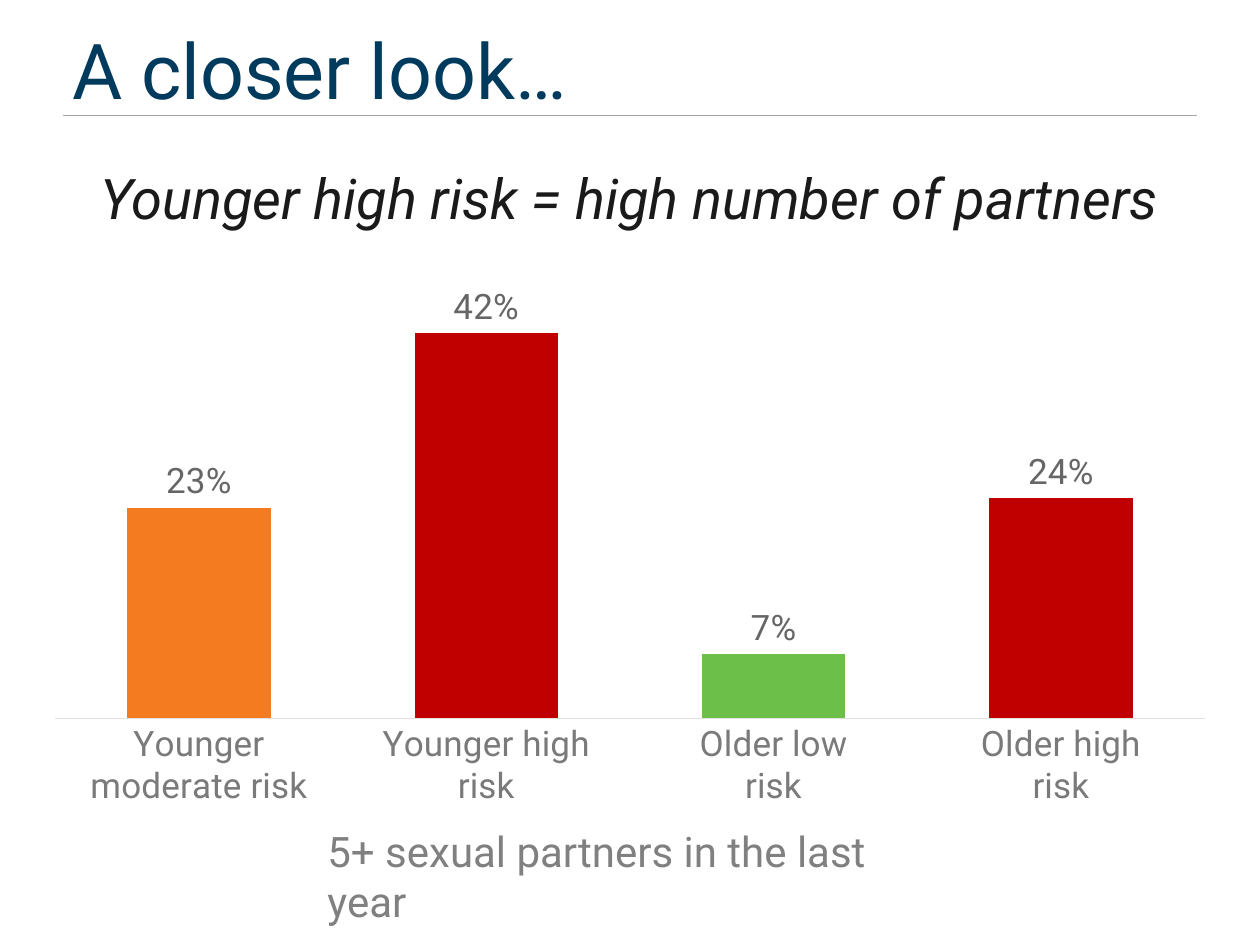
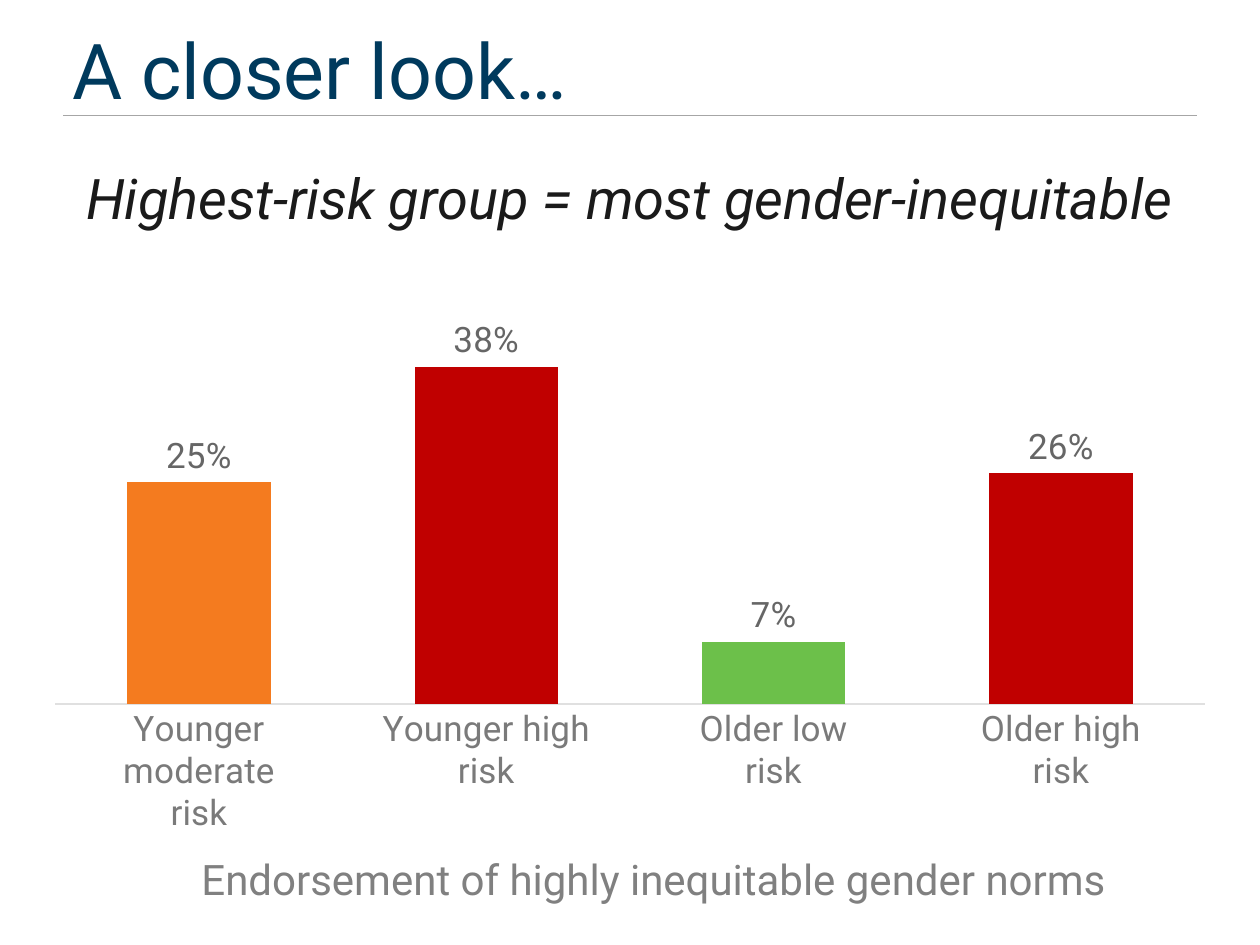
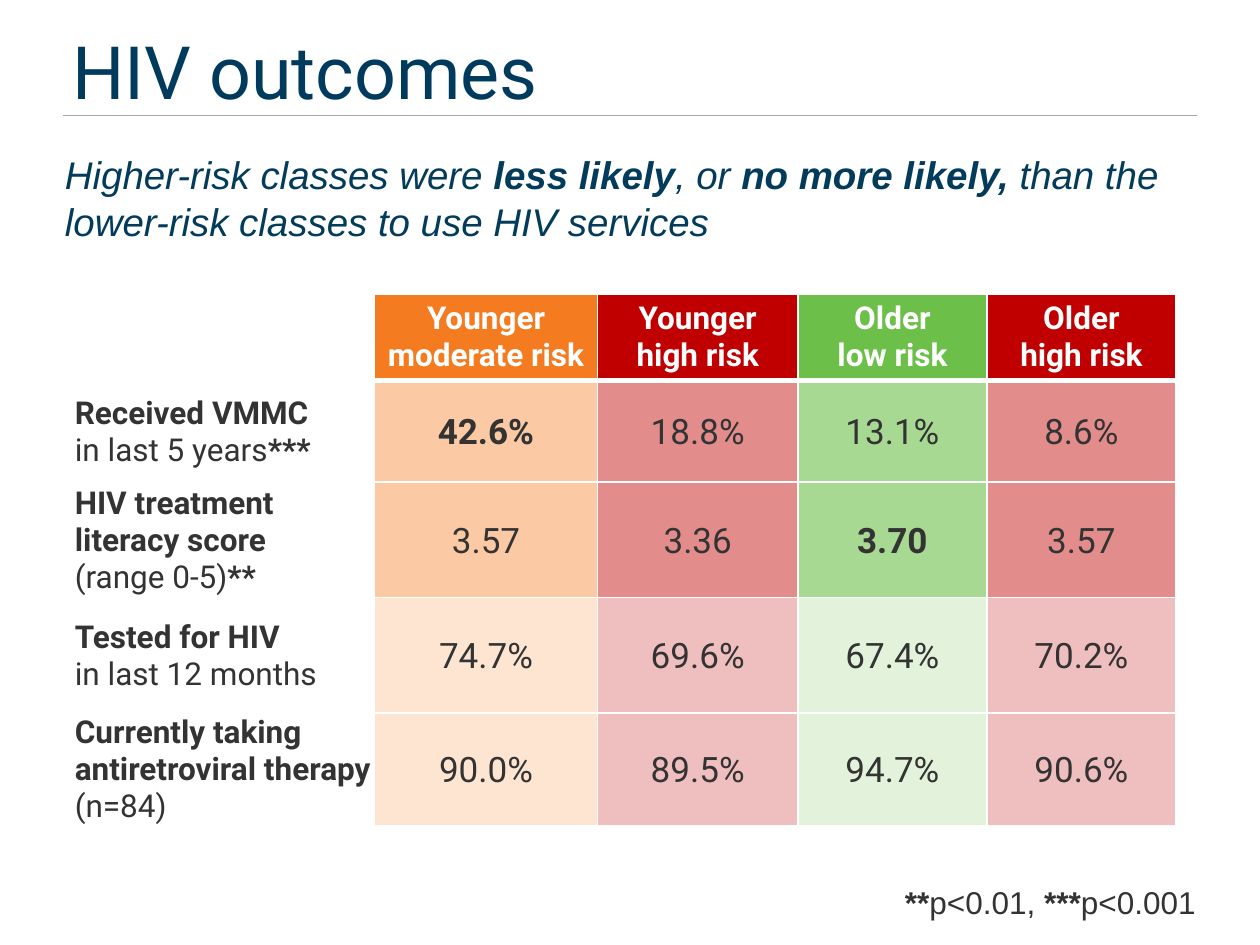
from typing import NamedTuple

from lxml import etree
from pptx import Presentation
from pptx.chart import data as chart_data
from pptx.dml.color import RGBColor
from pptx.enum import chart as charts, shapes, text
from pptx.oxml import ns
from pptx.util import Pt

COLOURS = {
    "title": "003A5D", "lead": "033C5A", "ink": "333333", "statement": "1A1A1A",
    "rule": "A6A6A6", "axis": "E0E0E0", "category": "7A7A7A", "value": "666666",
    "caption": "808080", "white": "FFFFFF",
    "orange": "F47B1F", "orange mid": "FBCAA5", "orange pale": "FDE5D2",
    "red": "C00000", "red mid": "E38C8C", "red pale": "EFBFBF",
    "green": "6CC04A", "green mid": "A7D992", "green pale": "E2F2DB",
}
GROUP_HUES = ["orange", "red", "green", "red"]
FONT = "Roboto"
LEFT, CENTER = text.PP_ALIGN.LEFT, text.PP_ALIGN.CENTER
TOP, MIDDLE, BOTTOM = text.MSO_ANCHOR.TOP, text.MSO_ANCHOR.MIDDLE, text.MSO_ANCHOR.BOTTOM


class Area(NamedTuple):
    """A rectangle in points."""
    left: float
    top: float
    width: float
    height: float


class Span(NamedTuple):
    text: str
    bold: bool = False


class ChartPage(NamedTuple):
    statement: str
    categories: list[str]
    values: list[float]
    chart_area: Area
    caption: str
    caption_area: Area


class Outcome(NamedTuple):
    label: list[list[Span]]
    values: list[str]
    shade: str
    height: float
    best: int | None = None


CHART_PAGES = [
    ChartPage("Younger high risk = high number of partners",
              ["Younger moderate risk", "Younger high\nrisk", "Older low\nrisk", "Older high\nrisk"],
              [0.23, 0.42, 0.07, 0.24], Area(18, 142, 684, 326),
              "5+ sexual partners in the last year", Area(180, 468, 367, 36)),
    ChartPage("Highest-risk group = most gender-inequitable",
              ["Younger moderate\nrisk", "Younger high\nrisk", "Older low\nrisk", "Older high\nrisk"],
              [0.25, 0.38, 0.07, 0.26], Area(18, 142, 684, 342),
              "Endorsement of highly inequitable gender norms", Area(108, 484, 533, 36)),
]

COLUMN_WIDTHS = [172, 127.5, 114.5, 108, 108]
HEADER_HEIGHT = 48
HEADERS = [["Younger moderate risk"], ["Younger", "high risk"], ["Older", "low risk"], ["Older", "high risk"]]
OUTCOMES = [
    Outcome([[Span("Received VMMC", True)], [Span("in last 5 years"), Span("***", True)]],
            ["42.6%", "18.8%", "13.1%", "8.6%"], "mid", 58, best=0),
    Outcome([[Span("HIV treatment", True)], [Span("literacy score", True)],
             [Span("(range 0-5)"), Span("**", True)]],
            ["3.57", "3.36", "3.70", "3.57"], "mid", 66, best=2),
    Outcome([[Span("Tested for HIV", True)], [Span("in last 12 months")]],
            ["74.7%", "69.6%", "67.4%", "70.2%"], "pale", 66),
    Outcome([[Span("Currently taking antiretroviral therapy ", True), Span("(n=84)")]],
            ["90.0%", "89.5%", "94.7%", "90.6%"], "pale", 50),
]


def rgb(name: str) -> RGBColor:
    return RGBColor.from_string(COLOURS[name])


def place(shape, area: Area) -> None:
    shape.left, shape.top, shape.width, shape.height = map(Pt, area)


def style_font(font, size: float, colour: str, name: str = FONT) -> None:
    font.size, font.name = Pt(size), name
    font.color.rgb = rgb(colour)


def write(frame, paragraphs: list[list[Span]], *, size: float, colour: str, font: str = FONT,
          italic: bool = False, align=LEFT, spacing: float = 1.0) -> None:
    frame.word_wrap = True
    for index, spans in enumerate(paragraphs):
        para = frame.paragraphs[0] if index == 0 else frame.add_paragraph()
        para.alignment, para.line_spacing, para.space_before = align, spacing, Pt(0)
        for span in spans:
            run = para.add_run()
            run.text = span.text
            style_font(run.font, size, colour, font)
            run.font.bold, run.font.italic = span.bold, italic


def add_text(page, area: Area, spans: list[Span], **style) -> None:
    box = page.shapes.add_textbox(*map(Pt, area))
    write(box.text_frame, [spans], **style)


def add_page(deck, layout: int, title: str, title_size: float = 44):
    """Add a slide with its title and the rule under it."""
    page = deck.slides.add_slide(deck.slide_layouts[layout])
    rule = page.shapes.add_connector(shapes.MSO_CONNECTOR.STRAIGHT, Pt(36), Pt(66), Pt(684), Pt(66))
    rule.line.color.rgb, rule.line.width = rgb("rule"), Pt(1)
    etree.SubElement(rule._element.spPr, ns.qn("a:effectLst"))
    heading = page.shapes.title
    place(heading, Area(34, 21, 494, 44.5))
    frame = heading.text_frame
    frame.auto_size, frame.vertical_anchor = text.MSO_AUTO_SIZE.NONE, BOTTOM
    frame.margin_bottom = 0
    write(frame, [[Span(title)]], size=title_size, colour="title")
    return page


def add_statement(page, statement: str) -> None:
    body = page.placeholders[1]
    place(body, Area(36, 90, 648, 372))
    frame = body.text_frame
    frame.auto_size, frame.vertical_anchor = text.MSO_AUTO_SIZE.NONE, TOP
    properties = frame.paragraphs[0]._p.get_or_add_pPr()
    properties.set("marL", "0")
    properties.set("indent", "0")
    etree.SubElement(properties, ns.qn("a:buNone"))
    write(frame, [[Span(statement)]], size=32, colour="statement", italic=True, align=CENTER)


def add_column_chart(page, content: ChartPage) -> None:
    source = chart_data.CategoryChartData(number_format="0%")
    source.categories = content.categories
    source.add_series("Series 1", content.values)
    chart = page.shapes.add_chart(charts.XL_CHART_TYPE.COLUMN_CLUSTERED,
                                  *map(Pt, content.chart_area), source).chart
    style_font(chart.font, 20, "ink")
    chart.has_legend = chart.has_title = False

    values = chart.value_axis
    values.minimum_scale, values.maximum_scale = 0, 0.5
    values.has_major_gridlines = values.visible = False

    groups = chart.category_axis
    groups.major_tick_mark = charts.XL_TICK_MARK.NONE
    groups.format.line.color.rgb, groups.format.line.width = rgb("axis"), Pt(0.75)
    style_font(groups.tick_labels.font, 20, "category")

    plot = chart.plots[0]
    plot.gap_width, plot.overlap, plot.vary_by_categories = 100, -100, False
    plot.has_data_labels = True
    labels = plot.data_labels
    labels.show_value, labels.position = True, charts.XL_LABEL_POSITION.OUTSIDE_END
    labels.number_format, labels.number_format_is_linked = "0%", False
    style_font(labels.font, 20, "value")

    series = plot.series[0]
    series.format.fill.solid()
    series.format.fill.fore_color.rgb = rgb(GROUP_HUES[0])
    for index, hue in enumerate(GROUP_HUES[1:], start=1):
        fill = series.points[index].format.fill
        fill.solid()
        fill.fore_color.rgb = rgb(hue)


def paint_cell(cell, fill: str, bottom_border: float = 1) -> None:
    """Fill a cell and give it white borders."""
    cell.fill.solid()
    cell.fill.fore_color.rgb = rgb(fill)
    properties = cell._tc.get_or_add_tcPr()
    widths = {"lnL": 1, "lnR": 1, "lnT": 1, "lnB": bottom_border}
    for index, (side, width) in enumerate(widths.items()):
        border = etree.Element(ns.qn(f"a:{side}"), w=str(Pt(width)))
        paint = etree.SubElement(border, ns.qn("a:solidFill"))
        etree.SubElement(paint, ns.qn("a:srgbClr"), val=COLOURS["white"])
        properties.insert(index, border)


def set_margins(cell, side: float, top: float) -> None:
    cell.margin_left = cell.margin_right = Pt(side)
    cell.margin_top, cell.margin_bottom = Pt(top), 0
    cell.vertical_anchor = MIDDLE


def add_outcome_table(page) -> None:
    heights = [HEADER_HEIGHT] + [outcome.height for outcome in OUTCOMES]
    area = Area(42, 168, sum(COLUMN_WIDTHS), sum(heights))
    table = page.shapes.add_table(len(heights), len(COLUMN_WIDTHS), *map(Pt, area)).table
    table.first_row = table.horz_banding = False
    for column, width in zip(table.columns, COLUMN_WIDTHS):
        column.width = Pt(width)
    for row, height in zip(table.rows, heights):
        row.height = Pt(height)

    paint_cell(table.cell(0, 0), "white", bottom_border=3)
    for column, (lines, hue) in enumerate(zip(HEADERS, GROUP_HUES), start=1):
        cell = table.cell(0, column)
        paint_cell(cell, hue, bottom_border=3)
        write(cell.text_frame, [[Span(line, True)] for line in lines],
              size=18, colour="white", align=CENTER)

    for row, outcome in enumerate(OUTCOMES, start=1):
        label = table.cell(row, 0)
        paint_cell(label, "white")
        set_margins(label, side=0.75, top=0.75)
        write(label.text_frame, outcome.label, size=18, colour="ink")
        for index, (value, hue) in enumerate(zip(outcome.values, GROUP_HUES)):
            cell = table.cell(row, index + 1)
            paint_cell(cell, f"{hue} {outcome.shade}")
            set_margins(cell, side=5, top=0)
            write(cell.text_frame, [[Span(value, index == outcome.best)]],
                  size=20, colour="ink", align=CENTER, spacing=1.07)


def main() -> None:
    deck = Presentation()
    deck.slide_width, deck.slide_height = Pt(720), Pt(540)

    for content in CHART_PAGES:
        page = add_page(deck, 1, "A closer look…")
        add_statement(page, content.statement)
        add_column_chart(page, content)
        add_text(page, content.caption_area, [Span(content.caption)], size=24, colour="caption")

    page = add_page(deck, 5, "HIV outcomes", title_size=42)
    add_outcome_table(page)
    add_text(page, Area(30, 83, 660, 60.5),
             [Span("Higher-risk classes were "), Span("less likely", True), Span(", or "),
              Span("no more likely, ", True),
              Span("than the lower-risk classes to use HIV services")],
             size=22, colour="lead", font="Arial", italic=True)
    add_text(page, Area(510, 501, 234, 29),
             [Span("**", True), Span("p<0.01, "), Span("***", True), Span("p<0.001")],
             size=18, colour="ink", font="Arial")
    deck.save("out.pptx")


if __name__ == "__main__":
    main()
